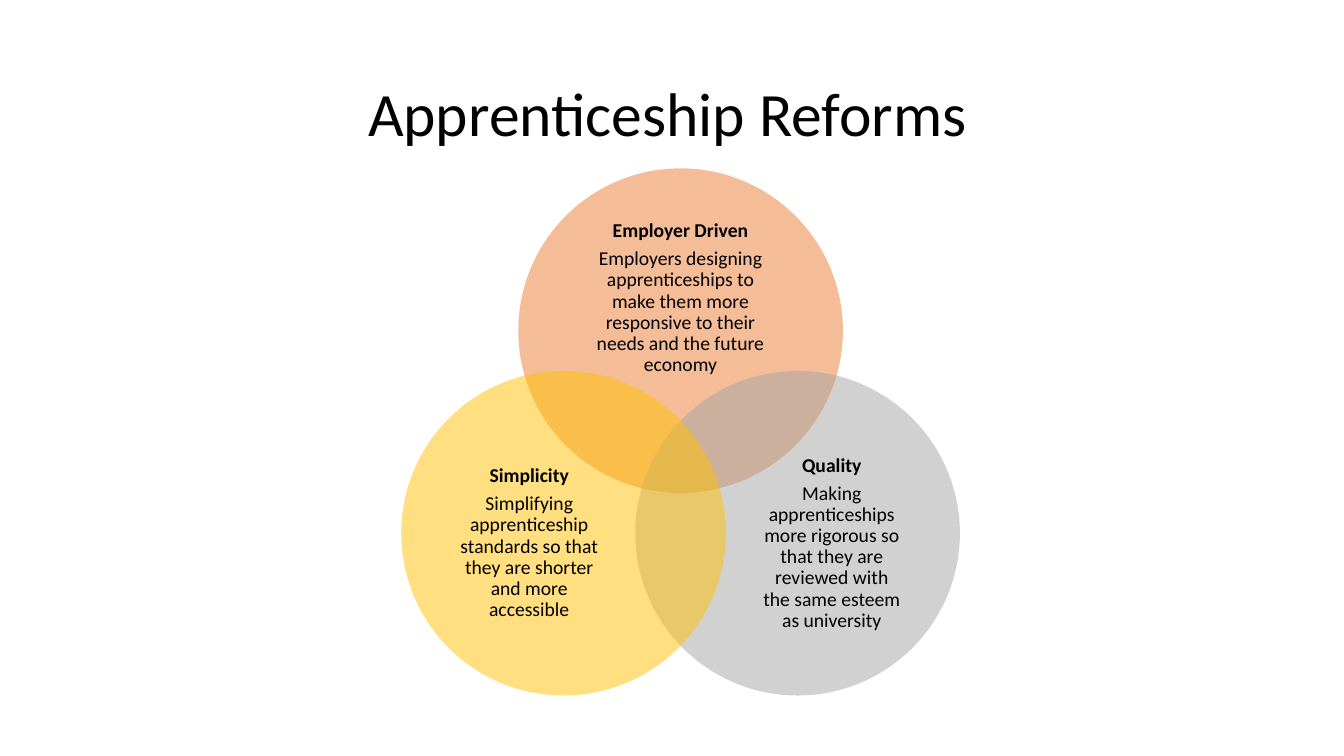
import math
from dataclasses import dataclass

import pptx
import pptx.dml.color
import pptx.enum.shapes
import pptx.enum.text
import pptx.oxml.ns
import pptx.util
from lxml import etree
from pptx.util import Inches


@dataclass(frozen=True)
class Theme:
    font: str = "Calibri"
    text: str = "000000"
    orange: str = "ED7D31"
    gray: str = "A5A5A5"
    gold: str = "FFC000"
    title_size: int = 44
    body_size: int = 14
    line_spacing: float = 0.9
    heading_gap: int = 5
    opacity: int = 50


class SlideBuilder:
    def __init__(self, presentation, theme):
        self.theme = theme
        title_only = presentation.slide_layouts[5]
        self.slide = presentation.slides.add_slide(title_only)

    def format_paragraph(self, paragraph, size, alignment, bold=False):
        paragraph.alignment = alignment
        paragraph.line_spacing = self.theme.line_spacing
        paragraph.font.name = self.theme.font
        paragraph.font.size = pptx.util.Pt(size)
        paragraph.font.bold = bold
        paragraph.font.color.rgb = pptx.dml.color.RGBColor.from_string(self.theme.text)

    def title(self, text, left, top, width, height):
        shape = self.slide.shapes.title
        shape.left, shape.top = Inches(left), Inches(top)
        shape.width, shape.height = Inches(width), Inches(height)
        frame = shape.text_frame
        frame.text = text
        frame.vertical_anchor = pptx.enum.text.MSO_ANCHOR.TOP
        self.format_paragraph(frame.paragraphs[0], self.theme.title_size,
                              pptx.enum.text.PP_ALIGN.LEFT)

    def circle(self, center_x, center_y, diameter, color):
        shape = self.slide.shapes.add_shape(
            pptx.enum.shapes.MSO_SHAPE.OVAL,
            Inches(center_x - diameter / 2), Inches(center_y - diameter / 2),
            Inches(diameter), Inches(diameter))
        shape.shadow.inherit = False
        shape.line.fill.background()
        shape.fill.solid()
        shape.fill.fore_color.rgb = pptx.dml.color.RGBColor.from_string(color)
        # Transparency lets the overlaps show
        qualified = pptx.oxml.ns.qn
        color_element = shape.fill._xPr.find(qualified("a:solidFill"))[0]
        alpha = etree.SubElement(color_element, qualified("a:alpha"))
        alpha.set("val", str(self.theme.opacity * 1000))

    def caption(self, heading, body, center_x, center_y, width, height):
        box = self.slide.shapes.add_textbox(
            Inches(center_x - width / 2), Inches(center_y - height / 2),
            Inches(width), Inches(height))
        frame = box.text_frame
        frame.word_wrap = True
        frame.vertical_anchor = pptx.enum.text.MSO_ANCHOR.MIDDLE
        frame.margin_left = frame.margin_right = 0
        frame.margin_top = frame.margin_bottom = 0
        frame.text = f"{heading}\n{body}"
        for paragraph, bold in zip(frame.paragraphs, (True, False)):
            self.format_paragraph(paragraph, self.theme.body_size,
                                  pptx.enum.text.PP_ALIGN.CENTER, bold)
        frame.paragraphs[0].space_after = pptx.util.Pt(self.theme.heading_gap)


def main():
    theme = Theme()
    presentation = pptx.Presentation()
    presentation.slide_width = Inches(13.33)
    presentation.slide_height = Inches(7.5)
    builder = SlideBuilder(presentation, theme)

    # Title
    builder.title("Apprenticeship Reforms", 3.55, 0.78, 8.86, 1.07)

    # Venn diagram: circles a third of a turn apart, clockwise from the top
    venn_x, venn_y, orbit, diameter = 6.75, 4.62, 1.34, 3.22
    # heading, body, color, caption offset from circle center, caption size
    reforms = [
        ("Employer Driven",
         "Employers designing apprenticeships to make them more responsive "
         "to their needs and the future economy",
         theme.orange, (0, -0.32), (1.67, 1.03)),
        ("Quality",
         "Making apprenticeships more rigorous so that they are reviewed "
         "with the same esteem as university",
         theme.gray, (0.34, 0.1), (1.37, 1.25)),
        ("Simplicity",
         "Simplifying apprenticeship standards so that they are shorter "
         "and more accessible",
         theme.gold, (-0.34, 0.1), (1.37, 1.25)),
    ]
    for index, (heading, body, color, offset, size) in enumerate(reforms):
        angle = math.tau * index / len(reforms)
        center_x = venn_x + orbit * math.sin(angle)
        center_y = venn_y - orbit * math.cos(angle)
        builder.circle(center_x, center_y, diameter, color)
        builder.caption(heading, body, center_x + offset[0],
                        center_y + offset[1], *size)

    presentation.save("out.pptx")


if __name__ == "__main__":
    main()
